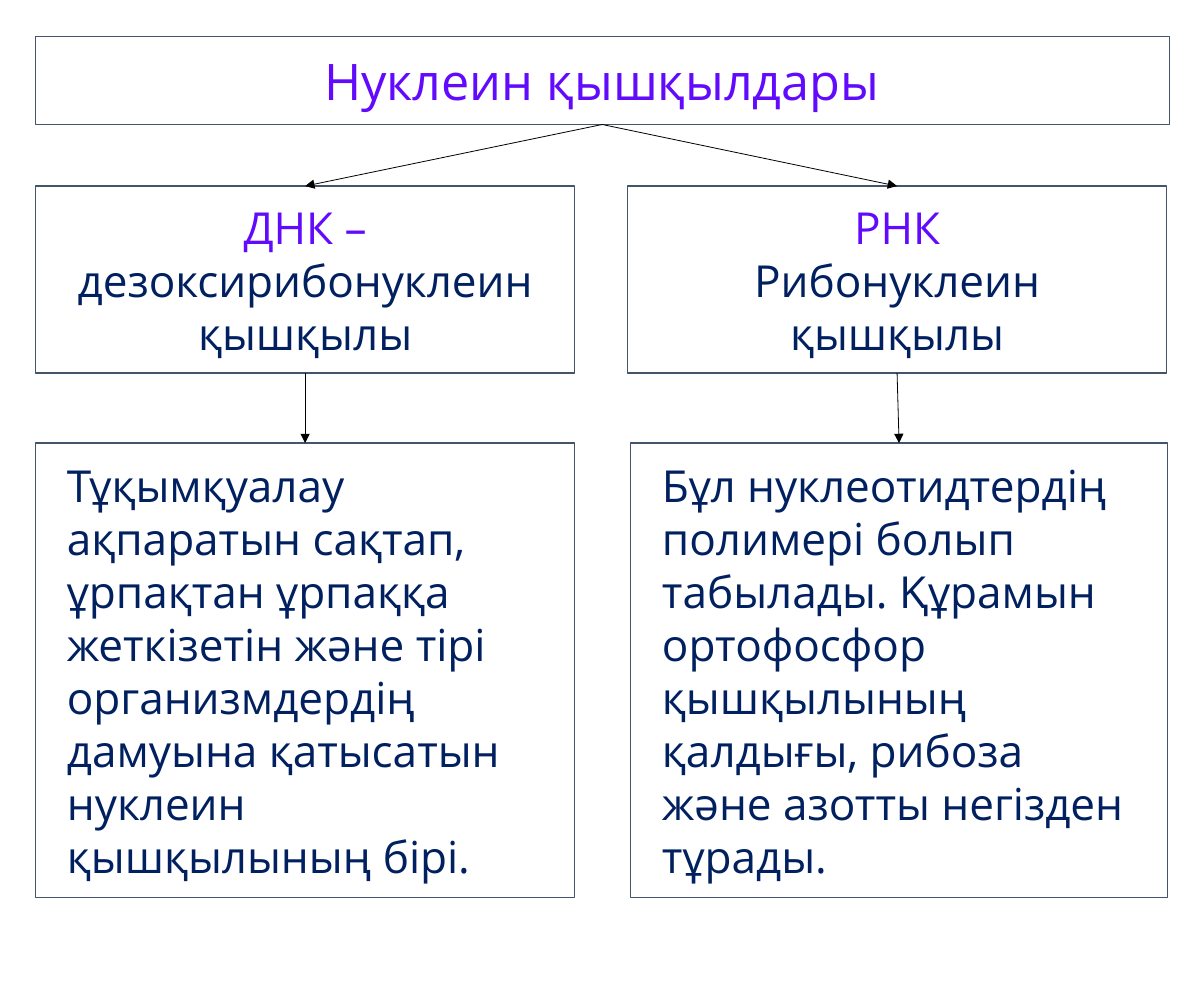
from lxml.etree import SubElement
from pptx import Presentation
from pptx.dml.color import RGBColor
from pptx.enum.shapes import MSO_CONNECTOR, MSO_SHAPE
from pptx.enum.text import MSO_ANCHOR, MSO_AUTO_SIZE, PP_ALIGN
from pptx.oxml.ns import qn
from pptx.util import Cm, Pt

COLORS = {"accent": "620BFC", "text": "002060", "border": "44546A", "arrow": "000000"}
FONT = "Open Sans"
LEFT = 0.79
BOX_W = 12.09
NAME_TOP, NAME_H = 4.17, 4.19
BODY_TOP, BODY_H = 9.93, 10.19

ACIDS = [
    (
        (LEFT, BOX_W),
        [[("ДНК – ", "accent"), ("дезоксирибонуклеин", "text")], [("қышқылы", "text")]],
        (LEFT, BOX_W),
        "Тұқымқуалау ақпаратын сақтап, ұрпақтан ұрпаққа жеткізетін және тірі "
        "организмдердің дамуына қатысатын нуклеин қышқылының бірі.",
    ),
    (
        (14.05, BOX_W),
        [[("РНК", "accent")], [("Рибонуклеин қышқылы", "text")]],
        (14.12, 12.04),
        "Бұл нуклеотидтердің полимері болып табылады. Құрамын ортофосфор "
        "қышқылының қалдығы, рибоза және азотты негізден тұрады.",
    ),
]


def rgb(name):
    return RGBColor.from_string(COLORS[name])


class Diagram:
    """Holds the slide and draws its boxes and arrows in one style."""

    def __init__(self, s):
        """Keep the current slide."""
        self.s = s

    def frame(self, sp, paragraphs, size, align):
        """Outline a shape and fill it with coloured runs."""
        sp.fill.background()
        sp.line.color.rgb = rgb("border")
        sp.line.width = Pt(0.75)
        tf = sp.text_frame
        tf.word_wrap = True
        tf.auto_size = MSO_AUTO_SIZE.NONE
        tf.vertical_anchor = MSO_ANCHOR.MIDDLE
        tf.margin_left = tf.margin_right = Cm(0.71)
        tf.margin_top = tf.margin_bottom = Cm(0.3)
        for i, runs in enumerate(paragraphs):
            p = tf.add_paragraph() if i else tf.paragraphs[0]
            p.alignment = align
            p.line_spacing = Pt(size * 1.2)
            for text, color in runs:
                r = p.add_run()
                r.text = text
                r.font.name = FONT
                r.font.size = Pt(size)
                r.font.color.rgb = rgb(color)
        return sp

    def title(self, text, left, top, width, height):
        """Place the title placeholder as the top box."""
        sp = self.s.shapes.title
        sp.left, sp.top, sp.width, sp.height = Cm(left), Cm(top), Cm(width), Cm(height)
        return self.frame(sp, [[(text, "accent")]], 32, PP_ALIGN.CENTER)

    def box(self, paragraphs, left, top, width, height, align):
        """Add a bordered rectangle with text."""
        sp = self.s.shapes.add_shape(
            MSO_SHAPE.RECTANGLE, Cm(left), Cm(top), Cm(width), Cm(height)
        )
        sp.shadow.inherit = False
        return self.frame(sp, paragraphs, 28, align)

    def arrow(self, upper, lower):
        """Join the bottom of one box to the top of another."""
        c = self.s.shapes.add_connector(MSO_CONNECTOR.STRAIGHT, 0, 0, 0, 0)
        c.begin_connect(upper, 2)
        c.end_connect(lower, 0)
        c.line.color.rgb = rgb("arrow")
        c.line.width = Pt(0.5)
        SubElement(c.line._get_or_add_ln(), qn("a:tailEnd"), type="triangle")
        SubElement(c._element.spPr, qn("a:effectLst"))


def main():
    """Build and save the slide."""
    prs = Presentation()
    prs.slide_width, prs.slide_height = Cm(26.97), Cm(22.23)
    d = Diagram(prs.slides.add_slide(prs.slide_layouts[5]))
    title = d.title("Нуклеин қышқылдары", LEFT, 0.81, 25.4, 1.98)
    for (name_x, name_w), name, (body_x, body_w), body in ACIDS:
        upper = d.box(name, name_x, NAME_TOP, name_w, NAME_H, PP_ALIGN.CENTER)
        lower = d.box(
            [[(body, "text")]], body_x, BODY_TOP, body_w, BODY_H, PP_ALIGN.LEFT
        )
        d.arrow(title, upper)
        d.arrow(upper, lower)
    prs.save("out.pptx")


if __name__ == "__main__":
    main()
